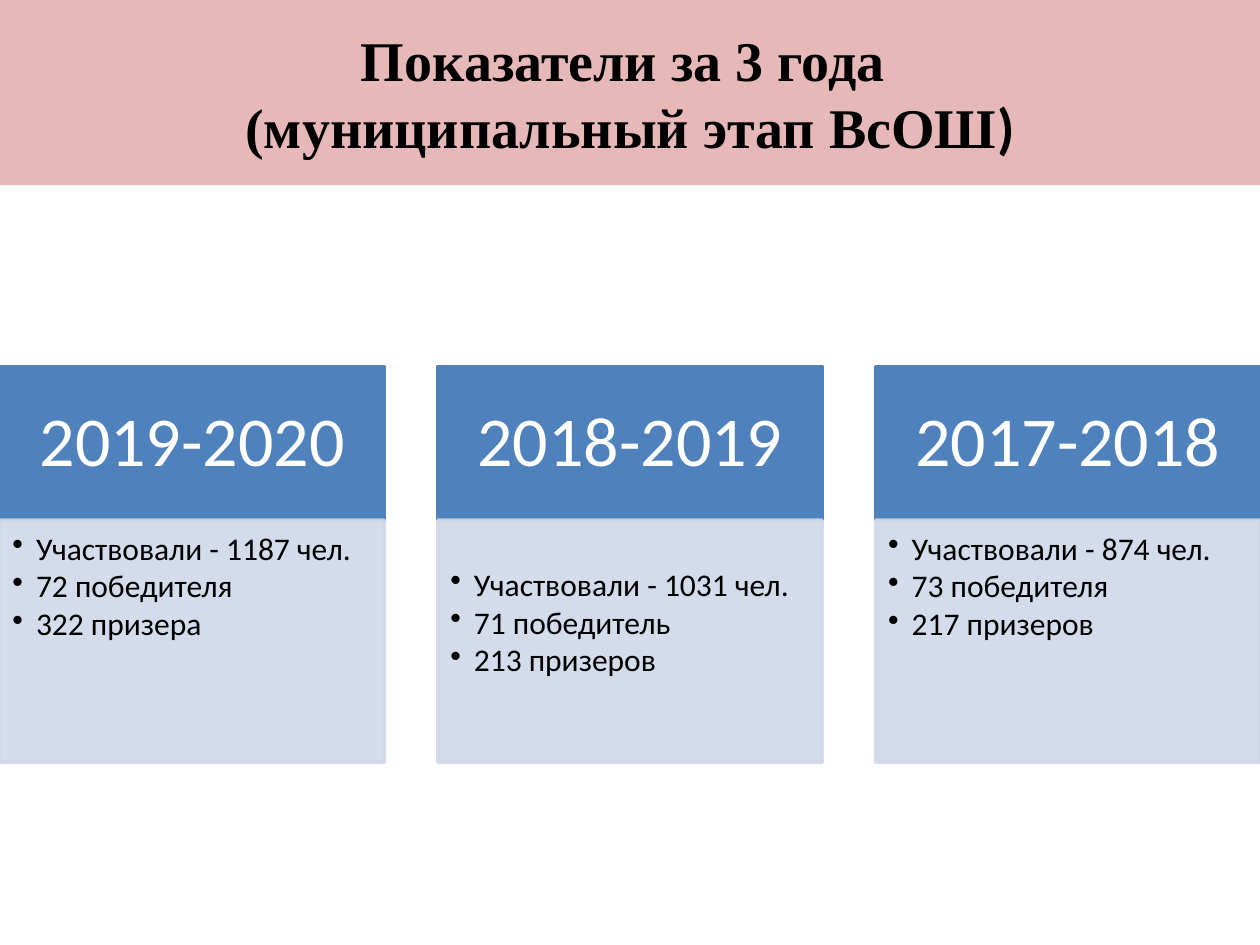
"""Build a slide that compares three school years of contest results."""
from dataclasses import dataclass

from pptx import Presentation
from pptx.dml.color import RGBColor
from pptx.enum.shapes import MSO_SHAPE as Shape
from pptx.enum.text import MSO_ANCHOR as Anchor, PP_ALIGN as Align
from pptx.oxml.ns import qn
from pptx.util import Pt

PINK = RGBColor(0xE6, 0xB9, 0xB8)
BLUE = RGBColor(0x4F, 0x81, 0xBD)
PALE = RGBColor(0xD0, 0xD8, 0xE8)
BLACK = RGBColor(0, 0, 0)
WHITE = RGBColor(0xFF, 0xFF, 0xFF)

WIDE, HIGH = 720, 540
COL, TOP, HEAD, BODY = 219.6, 209.5, 87.8, 138.4


@dataclass
class Year:
    name: str
    facts: tuple[str, ...]
    inset: float = 7.2


YEARS = (
    Year("2019-2020", ("Участвовали - 1187 чел.", "72 победителя", "322 призера")),
    Year("2018-2019", ("Участвовали - 1031 чел.", "71 победитель", "213 призеров"), 27.8),
    Year("2017-2018", ("Участвовали - 874 чел.", "73 победителя", "217 призеров")),
)


def write(para, text: str, *, size: float, color: RGBColor = BLACK,
          font: str = "Calibri", bold: bool = False, align=Align.LEFT,
          lead: float = 1.0, after: float = 0) -> None:
    """Add formatted text to a paragraph."""
    para.alignment, para.line_spacing, para.space_after = align, lead, Pt(after)
    for i, line in enumerate(text.split("\n")):
        if i:
            para.add_line_break()
        run = para.add_run()
        run.text = line
        run.font.name, run.font.size, run.font.bold = font, Pt(size), bold
        run.font.color.rgb = color


def bullet(para) -> None:
    """Give a paragraph a round bullet and a hanging indent."""
    para.level = 1
    props = para._p.get_or_add_pPr()
    props.set("marL", str(Pt(13.5)))
    props.set("indent", str(-Pt(13.5)))
    props.makeelement(qn("a:buChar"), {})
    mark = props.makeelement(qn("a:buChar"), {"char": "•"})
    props.append(mark)


def box(slide, left: float, top: float, high: float, color: RGBColor,
        pad: tuple[float, float, float, float], anchor, alpha: int = 100):
    """Draw a filled column box and return its text frame."""
    shape = slide.shapes.add_shape(Shape.RECTANGLE, Pt(left), Pt(top), Pt(COL), Pt(high))
    shape.shadow.inherit = False
    shape.fill.solid()
    shape.fill.fore_color.rgb = color
    shape.line.color.rgb = color
    shape.line.width = Pt(2)
    if alpha < 100:
        for tint in shape.element.spPr.iter(qn("a:srgbClr")):
            tint.append(tint.makeelement(qn("a:alpha"), {"val": str(alpha * 1000)}))
    frame = shape.text_frame
    frame.word_wrap, frame.vertical_anchor = True, anchor
    (frame.margin_left, frame.margin_top,
     frame.margin_right, frame.margin_bottom) = map(Pt, pad)
    return frame


def column(slide, left: float, year: Year) -> None:
    """Draw one year with its heading and facts."""
    head = box(slide, left, TOP, HEAD, BLUE, (14, 13, 14, 13), Anchor.MIDDLE)
    write(head.paragraphs[0], year.name, size=40, color=WHITE,
          align=Align.CENTER, lead=0.9)
    body = box(slide, left, TOP + HEAD, BODY, PALE,
               (7.2, year.inset, 10, 11), Anchor.TOP, 90)
    for i, fact in enumerate(year.facts):
        para = body.add_paragraph() if i else body.paragraphs[0]
        write(para, fact, size=18, lead=0.9, after=2.2)
        bullet(para)


def banner(slide) -> None:
    """Place and format the title."""
    title = slide.shapes.title
    title.left, title.top, title.width, title.height = map(Pt, (0, 0, WIDE, 105.8))
    title.fill.solid()
    title.fill.fore_color.rgb = PINK
    title.text_frame.vertical_anchor = Anchor.MIDDLE
    para = title.text_frame.paragraphs[0]
    look = dict(size=32, bold=True, align=Align.CENTER)
    write(para, "Показатели за 3 года \n(муниципальный этап ВсОШ",
          font="Times New Roman", **look)
    write(para, ")", **look)


def main() -> None:
    """Build and save the slide."""
    deck = Presentation()
    deck.slide_width, deck.slide_height = Pt(WIDE), Pt(HIGH)
    slide = deck.slides.add_slide(deck.slide_layouts[5])
    banner(slide)
    step = (WIDE - COL) / (len(YEARS) - 1)
    for i, year in enumerate(YEARS):
        column(slide, i * step, year)
    deck.save("out.pptx")


if __name__ == "__main__":
    main()
